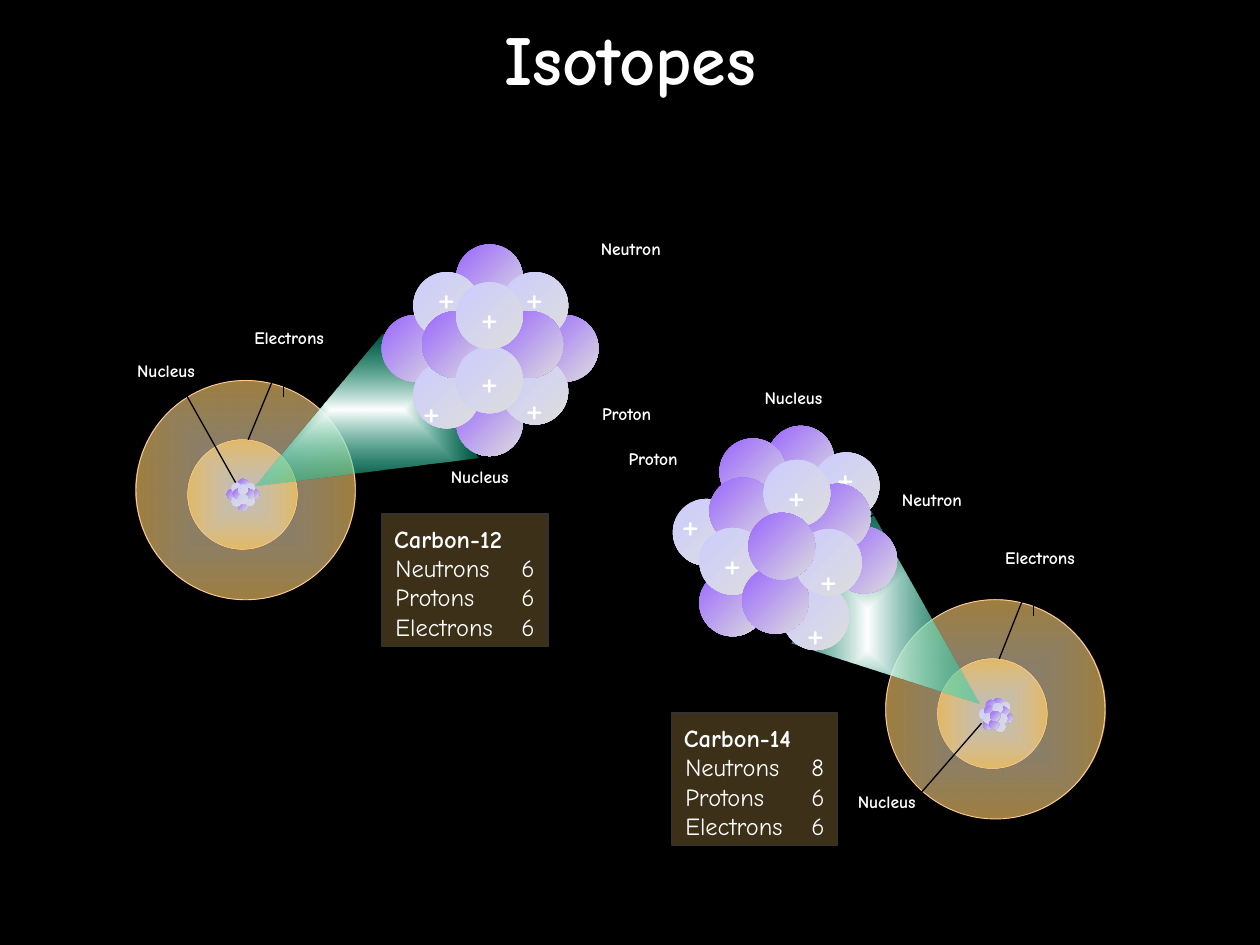
import pptx
import pptx.dml.color
import pptx.enum.shapes
import pptx.enum.text
import pptx.oxml
import pptx.oxml.ns
import pptx.util

Inches = pptx.util.Inches
Pt = pptx.util.Pt
SHAPE = pptx.enum.shapes.MSO_SHAPE
ALIGN = pptx.enum.text.PP_ALIGN
ANCHOR = pptx.enum.text.MSO_ANCHOR

FONT = "Comic Neue"
WHITE, BLACK = "FFFFFF", "000000"
NEUTRON = [(0, "9966FF", 100), (100, "DDDDDD", 100)]
PROTON = [(0, "CCCCFF", 100), (100, "DDDDDD", 100)]
CONE = [(0, "FFFFFF", 100), (100, "00CC99", 39)]
CONE_POINTS = [(0, 1.2), (1.01, 0), (1.77, 0.98)]
# offset x, offset y, diameter, line width, gradient
SHELLS = [
    (0, 0, 1.74, 0.5, [(0, "FFFFFF", 49), (100, "FFCC66", 62)]),
    (0.41, 0.47, 0.87, 0.25, [(0, "FFFFFF", 48), (100, "FFCC66", 75)]),
]
NUCLEON = 0.53
SMALL = 0.15  # scale of the nucleus inside the atom

# nucleons from back to front: x, y and, for a proton, the shift of its plus sign
ATOMS = [
    {
        "name": "Carbon-12",
        "counts": [("Neutrons", 6), ("Protons", 6), ("Electrons", 6)],
        "shells": (1.08, 3.02), "cone": (2.03, 2.65, 0), "box": (3.03, 4.08),
        "origin": (3.03, 1.94), "small_origin": (1.8, 3.8),
        "nucleons": [
            (3.62, 1.94), (3.03, 2.5), (3.62, 3.09), (4.22, 2.5),
            (3.28, 2.16, 0, -0.08), (3.28, 2.87, -0.12, 0.12), (3.35, 2.47),
            (3.98, 2.84, 0, 0.12), (3.98, 2.16, 0, -0.08), (3.94, 2.47),
            (3.62, 2.75, 0, 0), (3.62, 2.24, 0, 0),
        ],
        "labels": [
            ("Nucleus", 0.99, 2.81), ("Electrons", 1.92, 2.55), ("Nucleus", 3.48, 3.65),
            ("Neutron", 4.67, 1.84), ("Proton", 4.68, 3.15),
        ],
        "pointers": [
            (1.42, 3.03, 1.87, 3.83), (2.25, 2.81, 1.97, 3.49), (2.25, 2.81, 2.25, 3.15),
            (4.75, 2.11, 4.67, 2.55), (4.75, 3.28, 4.47, 3.28),
        ],
    },
    {
        "name": "Carbon-14",
        "counts": [("Neutrons", 8), ("Protons", 6), ("Electrons", 6)],
        "shells": (7.03, 4.76), "cone": (6, 4.39, 247.7), "box": (5.33, 5.66),
        "origin": (5.34, 3.38), "small_origin": (7.77, 5.54),
        "nucleons": [
            (6.09, 3.38), (5.71, 3.48), (5.55, 4.52), (6.59, 4.18),
            (5.34, 3.96, -0.12, -0.08), (5.63, 3.79), (6.21, 4.63, 0, 0.12),
            (6.45, 3.59, 0, -0.08), (6.38, 3.84), (5.55, 4.19, 0, 0),
            (6.06, 3.65, 0, 0), (5.89, 4.5), (6.31, 4.2, 0, 0.12), (5.94, 4.07),
        ],
        "labels": [
            ("Nucleus", 6.71, 6.23), ("Electrons", 7.88, 4.29), ("Nucleus", 5.97, 3.02),
            ("Neutron", 7.06, 3.83), ("Proton", 4.89, 3.51),
        ],
        "pointers": [
            (8.2, 4.55, 7.93, 5.23), (8.2, 4.55, 8.2, 4.89), (7.26, 6.35, 7.79, 5.74),
            (5.41, 3.78, 5.54, 3.96), (7.12, 3.97, 6.91, 4.1),
        ],
    },
]


def rgb(value):
    return pptx.dml.color.RGBColor.from_string(value)


def element(xml):
    """Parse one element whose root tag is in the a: namespace."""
    head, tail = xml[:2], xml[2:]
    name_end = min(i for i in (tail.find(c) for c in " />") if i > 0)
    return pptx.oxml.parse_xml(
        head + tail[:name_end] + " " + pptx.oxml.ns.nsdecls("a") + tail[name_end:])


def set_line(s, color=None, width=0.75):
    if color:
        s.line.color.rgb = rgb(color)
        s.line.width = Pt(width)
    else:
        s.line.fill.background()


def set_gradient(s, stops, path=None):
    """Fill along 45 degrees, or from the centre outwards when path is given."""
    gs = "".join(
        f'<a:gs pos="{pos * 1000}"><a:srgbClr val="{color}">'
        f'<a:alpha val="{alpha * 1000}"/></a:srgbClr></a:gs>' for pos, color, alpha in stops)
    direction = '<a:lin ang="2700000" scaled="1"/>'
    if path:
        direction = (f'<a:path path="{path}"><a:fillToRect l="50000" t="50000" '
                     'r="50000" b="50000"/></a:path>')
    s.fill.solid()
    solid = s._element.spPr.find(pptx.oxml.ns.qn("a:solidFill"))
    solid.getparent().replace(solid, element(
        f'<a:gradFill rotWithShape="1"><a:gsLst>{gs}</a:gsLst>{direction}</a:gradFill>'))


def add_preset(kind, x, y, w, h):
    s = slide.shapes.add_shape(kind, Inches(x), Inches(y), Inches(w), Inches(h))
    s.shadow.inherit = False
    return s


def write(tf, lines, size, bold=False, align=ALIGN.LEFT, tab=None, **frame):
    for key, value in frame.items():
        setattr(tf, key, value)
    for i, line in enumerate(lines):
        p = tf.paragraphs[0] if i == 0 else tf.add_paragraph()
        p.alignment = align
        if tab:
            p._p.get_or_add_pPr().append(element(
                f'<a:tabLst><a:tab pos="{Inches(tab)}" algn="l"/></a:tabLst>'))
        r = p.add_run()
        r.text = line
        for key, value in {"name": FONT, "size": Pt(size), "bold": bold}.items():
            setattr(r.font, key, value)
        r.font.color.rgb = rgb(WHITE)


def add_text(lines, x, y, w, h, size, **style):
    s = slide.shapes.add_textbox(Inches(x), Inches(y), Inches(w), Inches(h))
    write(s.text_frame, lines, size, **{"word_wrap": True, **style})


def add_nucleus(atom, origin, scale=1):
    x0, y0 = atom["origin"]
    for x, y, *shift in atom["nucleons"]:
        s = add_preset(SHAPE.OVAL, origin[0] + (x - x0) * scale,
                       origin[1] + (y - y0) * scale, NUCLEON * scale, NUCLEON * scale)
        set_gradient(s, PROTON if shift else NEUTRON)
        set_line(s)
        if shift and scale == 1:
            dx, dy = shift
            insets = {"margin_left": dx, "margin_right": -dx,
                      "margin_top": dy, "margin_bottom": -dy}
            write(s.text_frame, ["+"], 24, align=ALIGN.CENTER, word_wrap=False,
                  vertical_anchor=ANCHOR.MIDDLE,
                  **{key: Inches(max(0, 2 * value)) for key, value in insets.items()})


def add_shells(x, y):
    for dx, dy, size, width, stops in SHELLS:
        s = add_preset(SHAPE.OVAL, x + dx, y + dy, size, size)
        set_gradient(s, stops, "shape")
        set_line(s, "FFCC99", width)


def add_cone(x, y, rotation):
    points = [(Inches(x + px), Inches(y + py)) for px, py in CONE_POINTS]
    builder = slide.shapes.build_freeform(*points[0])
    builder.add_line_segments(points[1:], close=True)
    s = builder.convert_to_shape()
    s.shadow.inherit = False
    s.rotation = rotation
    set_gradient(s, CONE, "rect")
    set_line(s)


def add_pointer(*ends):
    s = slide.shapes.add_connector(
        pptx.enum.shapes.MSO_CONNECTOR.STRAIGHT, *(Inches(v) for v in ends))
    set_line(s, BLACK)
    s._element.spPr.append(element("<a:effectLst/>"))


def add_count_box(atom):
    x, y = atom["box"]
    s = add_preset(SHAPE.RECTANGLE, x, y, 1.32, 1.05)
    s.fill.solid()
    s.fill.fore_color.rgb = rgb("FFCC66")
    s._element.spPr.find(".//" + pptx.oxml.ns.qn("a:srgbClr")).append(
        element('<a:alpha val="24000"/>'))
    set_line(s, "333333")
    add_text([atom["name"]], x, y + 0.03, 1.16, 0.33, 14, bold=True)
    rows = [f"{label}\t{count}" for label, count in atom["counts"]]
    add_text(rows, x + 0.01, y + 0.26, 1.31, 0.8, 14, tab=1)


prs = pptx.Presentation()
prs.slide_width, prs.slide_height = Inches(10), Inches(7.5)
slide = prs.slides.add_slide(prs.slide_layouts[6])
slide.background.fill.solid()
slide.background.fill.fore_color.rgb = rgb(BLACK)

add_text(["Isotopes"], 0, 0, 10, 0.92, 40, bold=True, align=ALIGN.CENTER,
         vertical_anchor=ANCHOR.MIDDLE)
for atom in ATOMS:
    add_shells(*atom["shells"])
    add_cone(*atom["cone"])
    add_nucleus(atom, atom["origin"])
    for label, x, y in atom["labels"]:
        add_text([label], x, y, 0.83, 0.27, 10, bold=True, word_wrap=False)
    for ends in atom["pointers"]:
        add_pointer(*ends)
    add_count_box(atom)
    add_nucleus(atom, atom["small_origin"], SMALL)

prs.save("out.pptx")
